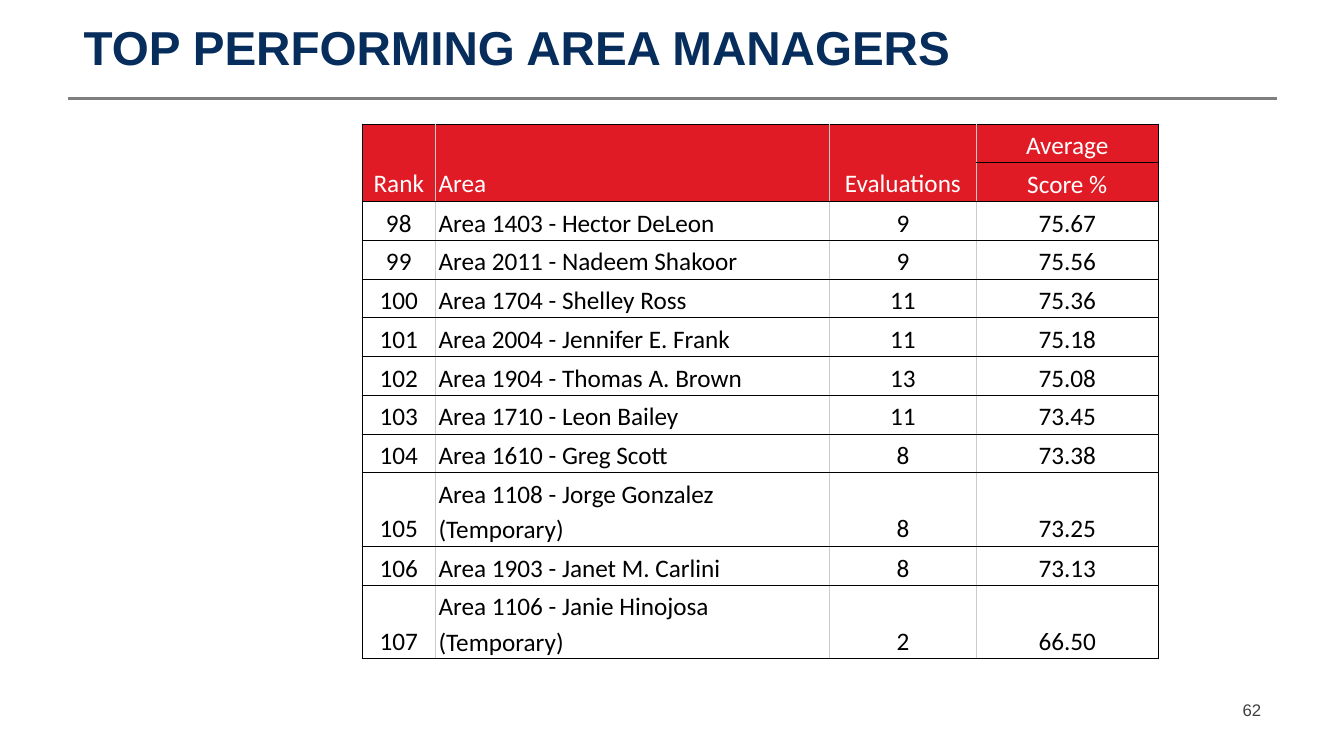
from lxml import etree
from pptx import Presentation
from pptx import util as u
from pptx.dml.color import RGBColor
from pptx.enum import shapes, text
from pptx.oxml import ns

COLORS = {
    "navy": "062D5B", "rule": "7F7F7F", "header": "E01B25", "white": "FFFFFF",
    "black": "000000", "grid": "CCCCCC", "number": "3F3F3F",
}
HEADER_ROWS = [("Rank", "Area", "Evaluations", "Average"), ("", "", "", "Score %")]
MANAGERS = [
    ("98", "Area 1403 - Hector DeLeon", "9", "75.67"),
    ("99", "Area 2011 - Nadeem Shakoor", "9", "75.56"),
    ("100", "Area 1704 - Shelley Ross", "11", "75.36"),
    ("101", "Area 2004 - Jennifer E. Frank", "11", "75.18"),
    ("102", "Area 1904 - Thomas A. Brown", "13", "75.08"),
    ("103", "Area 1710 - Leon Bailey", "11", "73.45"),
    ("104", "Area 1610 - Greg Scott", "8", "73.38"),
    ("105", "Area 1108 - Jorge Gonzalez (Temporary)", "8", "73.25"),
    ("106", "Area 1903 - Janet M. Carlini", "8", "73.13"),
    ("107", "Area 1106 - Janie Hinojosa (Temporary)", "2", "66.50"),
]
COLUMN_WIDTHS = [0.73, 3.91, 1.45, 1.81]
ROW_HEIGHT = 0.34
AREA_COLUMN = 1


def rgb(name):
    return RGBColor.from_string(COLORS[name])


def style_paragraph(paragraph, font, size, color, align, bold=False, spacing=None):
    paragraph.alignment = align
    if spacing:
        paragraph.line_spacing = spacing
    for run in paragraph.runs:
        run.font.name = font
        run.font.size = u.Pt(size)
        run.font.bold = bold
        run.font.color.rgb = rgb(color)


def add_label(slide, box, wording, anchor, inset_y, **style):
    label = slide.shapes.add_textbox(*map(u.Inches, box))
    frame = label.text_frame
    frame.word_wrap = True
    frame.vertical_anchor = anchor
    frame.margin_left = frame.margin_right = u.Inches(0.16)
    frame.margin_top = frame.margin_bottom = u.Inches(inset_y)
    frame.text = wording
    style_paragraph(frame.paragraphs[0], "Arial", **style)


def add_title_rule(slide):
    rule = slide.shapes.add_connector(
        shapes.MSO_CONNECTOR.STRAIGHT,
        u.Inches(0.67), u.Inches(0.98), u.Inches(12.67), u.Inches(0.98))
    rule.line.color.rgb = rgb("rule")
    rule.line.width = u.Pt(2)
    etree.SubElement(rule._element.spPr, ns.qn("a:effectLst"))


def set_borders(cell, **edges):
    properties = cell._tc.get_or_add_tcPr()
    for side, color in edges.items():
        edge = etree.SubElement(properties, ns.qn(f"a:ln{side}"), w=str(u.Pt(0.75)))
        fill = etree.SubElement(edge, ns.qn("a:solidFill"))
        etree.SubElement(fill, ns.qn("a:srgbClr"), val=COLORS[color])


def fill_cell(cell, wording, column, is_header):
    # Black outer edges and row lines, grey lines between columns
    last = len(COLUMN_WIDTHS) - 1
    set_borders(cell, L="black" if column == 0 else "grid",
                R="black" if column == last else "grid", T="black", B="black")
    cell.fill.solid()
    cell.fill.fore_color.rgb = rgb("header" if is_header else "white")
    cell.margin_left = cell.margin_right = u.Inches(0.03)
    cell.margin_top = cell.margin_bottom = u.Inches(0.02)
    cell.vertical_anchor = text.MSO_ANCHOR.BOTTOM
    cell.text_frame.text = wording
    align = text.PP_ALIGN.LEFT if column == AREA_COLUMN else text.PP_ALIGN.CENTER
    style_paragraph(cell.text_frame.paragraphs[0], "Calibri", 18,
                    "white" if is_header else "black", align, spacing=1.15)


def add_ranking(slide):
    rows = HEADER_ROWS + MANAGERS
    ranking = slide.shapes.add_table(
        len(rows), len(COLUMN_WIDTHS), u.Inches(3.59), u.Inches(1.23),
        u.Inches(sum(COLUMN_WIDTHS)), u.Inches(ROW_HEIGHT * len(rows))).table
    ranking.first_row = ranking.horz_banding = False
    for column, width in zip(ranking.columns, COLUMN_WIDTHS):
        column.width = u.Inches(width)
    for r, values in enumerate(rows):
        ranking.rows[r].height = u.Inches(ROW_HEIGHT)
        for c, value in enumerate(values):
            fill_cell(ranking.cell(r, c), value, c, r < len(HEADER_ROWS))
    # All headings but the score span both header rows
    for c in range(len(COLUMN_WIDTHS) - 1):
        ranking.cell(0, c).merge(ranking.cell(1, c))


def main():
    deck = Presentation()
    deck.slide_width, deck.slide_height = u.Inches(13.33), u.Inches(7.5)
    slide = deck.slides.add_slide(deck.slide_layouts[6])

    # Heading
    add_title_rule(slide)
    add_label(slide, (0.67, 0.31, 12, 0.59), "TOP PERFORMING AREA MANAGERS",
              text.MSO_ANCHOR.BOTTOM, 0.16, size=34, color="navy",
              align=text.PP_ALIGN.LEFT, bold=True, spacing=0.8)

    # Ranking table
    add_ranking(slide)

    # Page number
    add_label(slide, (9.56, 6.84, 3.11, 0.4), "62", text.MSO_ANCHOR.MIDDLE, 0.08,
              size=12, color="number", align=text.PP_ALIGN.RIGHT)

    deck.save("out.pptx")


if __name__ == "__main__":
    main()
